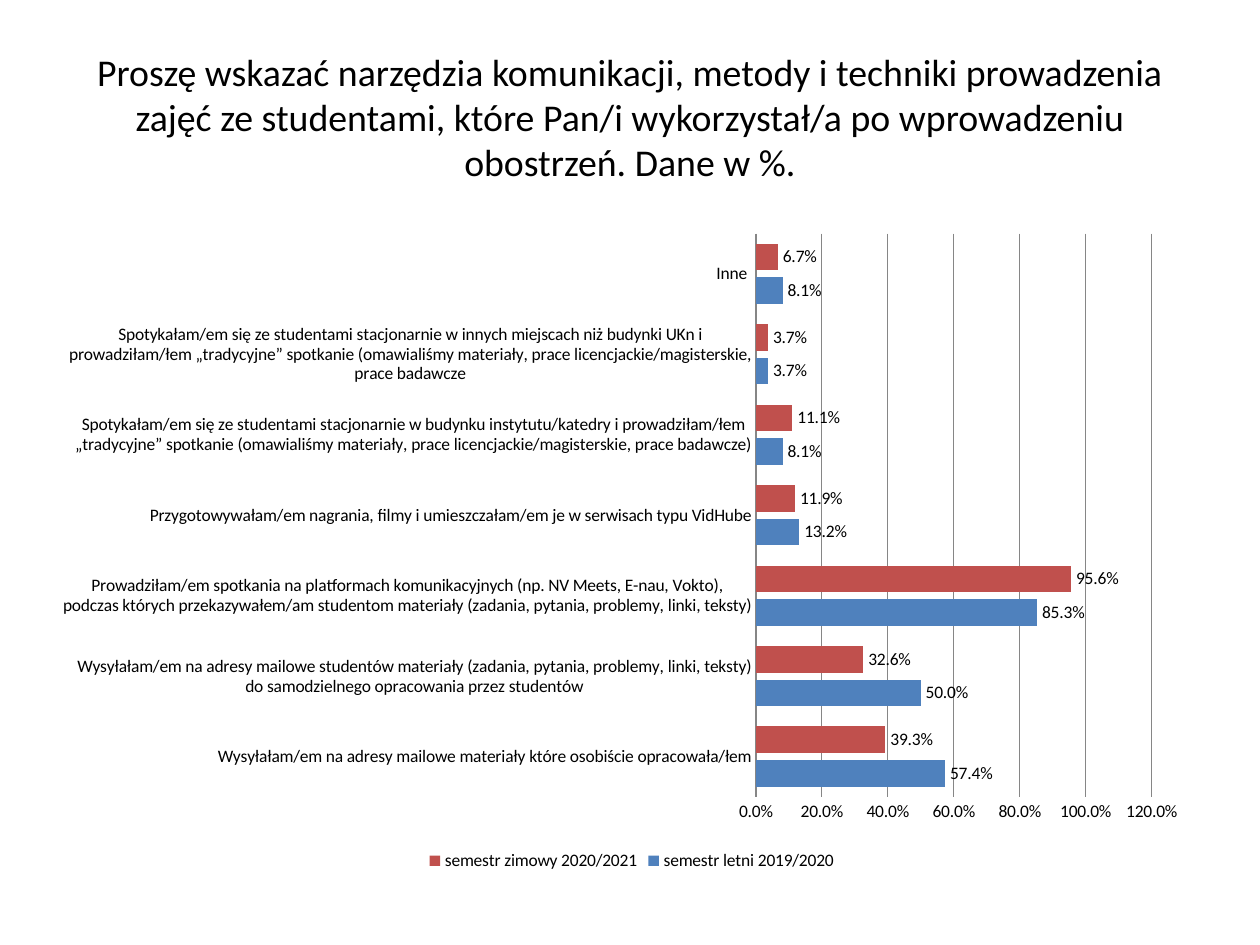
import dataclasses

import lxml.etree
import pptx
import pptx.chart.data
import pptx.dml.color
import pptx.enum.chart
import pptx.enum.text
import pptx.oxml.ns
import pptx.util

EMU_PER_PX = 9144
FONT = "Calibri"
NUMBER_FORMAT = "###0.0%"
COLORS = {
    "text": "000000",
    "grid": "868686",
    "summer": "4F81BD",
    "winter": "C0504D",
}
TITLE = (
    "Proszę wskazać narzędzia komunikacji, metody i techniki prowadzenia zajęć "
    "ze studentami, które Pan/i wykorzystał/a po wprowadzeniu obostrzeń. Dane w %."
)
CATEGORIES = (
    "Wysyłałam/em na adresy mailowe materiały które osobiście opracowała/łem",
    "Wysyłałam/em na adresy mailowe studentów materiały (zadania, pytania, "
    "problemy, linki, teksty) do samodzielnego opracowania przez studentów",
    "Prowadziłam/em spotkania na platformach komunikacyjnych (np. NV Meets, "
    "E-nau, Vokto), podczas których przekazywałem/am studentom materiały "
    "(zadania, pytania, problemy, linki, teksty)",
    "Przygotowywałam/em nagrania, filmy i umieszczałam/em je w serwisach typu VidHube",
    "Spotykałam/em się ze studentami stacjonarnie w budynku instytutu/katedry "
    "i prowadziłam/łem „tradycyjne” spotkanie (omawialiśmy materiały, prace "
    "licencjackie/magisterskie, prace badawcze)",
    "Spotykałam/em się ze studentami stacjonarnie w innych miejscach niż budynki "
    "UKn i prowadziłam/łem „tradycyjne” spotkanie (omawialiśmy materiały, prace "
    "licencjackie/magisterskie, prace badawcze",
    "Inne ",
)


@dataclasses.dataclass(frozen=True)
class Box:
    left: int
    top: int
    width: int
    height: int

    def emu(self) -> tuple[int, ...]:
        return tuple(px(value) for value in dataclasses.astuple(self))


@dataclasses.dataclass(frozen=True)
class Semester:
    name: str
    values: tuple[float, ...]
    color: str


TITLE_BOX = Box(50, 30, 900, 125)
CHART_BOX = Box(50, 175, 900, 520)
PLOT_LAYOUT = {"x": 0.61, "y": 0.02, "w": 0.35, "h": 0.86}
SEMESTERS = (
    Semester(
        "semestr letni 2019/2020",
        (0.574, 0.5, 0.853, 0.132, 0.081, 0.037, 0.081),
        "summer",
    ),
    Semester(
        "semestr zimowy 2020/2021",
        (0.393, 0.326, 0.956, 0.119, 0.111, 0.037, 0.067),
        "winter",
    ),
)


def px(value: int) -> int:
    return pptx.util.Emu(value * EMU_PER_PX)


def rgb(name: str) -> pptx.dml.color.RGBColor:
    return pptx.dml.color.RGBColor.from_string(COLORS[name])


def format_font(font, *, size: float, color: str = "text") -> None:
    font.name = FONT
    font.size = pptx.util.Pt(size)
    font.bold = False
    font.color.rgb = rgb(color)


def write_text(shape, text: str, *, size: float, color: str = "text") -> None:
    frame = shape.text_frame
    frame.text = text
    frame.word_wrap = True
    frame.auto_size = pptx.enum.text.MSO_AUTO_SIZE.NONE
    frame.vertical_anchor = pptx.enum.text.MSO_ANCHOR.MIDDLE
    paragraph = frame.paragraphs[0]
    paragraph.alignment = pptx.enum.text.PP_ALIGN.CENTER
    format_font(paragraph.runs[0].font, size=size, color=color)


def place_plot(chart) -> None:
    qn = pptx.oxml.ns.qn
    plot_area = chart.plots[0]._element.getparent()
    for layout in plot_area.findall(qn("c:layout")):
        plot_area.remove(layout)
    layout = lxml.etree.Element(qn("c:layout"))
    plot_area.insert(0, layout)
    manual = lxml.etree.SubElement(layout, qn("c:manualLayout"))
    settings = {"layoutTarget": "inner", "xMode": "edge", "yMode": "edge", **PLOT_LAYOUT}
    for tag, value in settings.items():
        lxml.etree.SubElement(manual, qn(f"c:{tag}")).set("val", str(value))


def format_axes(chart) -> None:
    for axis in (chart.category_axis, chart.value_axis):
        axis.major_tick_mark = pptx.enum.chart.XL_TICK_MARK.NONE
        axis.minor_tick_mark = pptx.enum.chart.XL_TICK_MARK.NONE
        format_font(axis.tick_labels.font, size=10)
    chart.category_axis.format.line.color.rgb = rgb("grid")
    value_axis = chart.value_axis
    value_axis.minimum_scale = 0
    value_axis.maximum_scale = 1.2
    value_axis.major_unit = 0.2
    value_axis.format.line.fill.background()
    value_axis.has_major_gridlines = True
    value_axis.major_gridlines.format.line.color.rgb = rgb("grid")
    value_axis.tick_labels.number_format = NUMBER_FORMAT
    value_axis.tick_labels.number_format_is_linked = False


def format_series(series, semester: Semester) -> None:
    series.format.fill.solid()
    series.format.fill.fore_color.rgb = rgb(semester.color)
    series.invert_if_negative = False
    labels = series.data_labels
    labels.show_value = True
    labels.number_format = NUMBER_FORMAT
    labels.number_format_is_linked = False
    labels.position = pptx.enum.chart.XL_LABEL_POSITION.OUTSIDE_END
    format_font(labels.font, size=10)


def add_bar_chart(slide, box: Box, semesters: tuple[Semester, ...]) -> None:
    data = pptx.chart.data.CategoryChartData(number_format=NUMBER_FORMAT)
    data.categories = CATEGORIES
    for semester in semesters:
        data.add_series(semester.name, semester.values)
    chart = slide.shapes.add_chart(
        pptx.enum.chart.XL_CHART_TYPE.BAR_CLUSTERED, *box.emu(), data
    ).chart
    format_font(chart.font, size=10)
    chart.has_title = False
    chart.has_legend = True
    chart.legend.position = pptx.enum.chart.XL_LEGEND_POSITION.BOTTOM
    chart.legend.include_in_layout = False
    format_font(chart.legend.font, size=10)
    plot = chart.plots[0]
    plot.vary_by_categories = False
    plot.gap_width = 75
    plot.overlap = -25
    for series, semester in zip(plot.series, semesters):
        format_series(series, semester)
    format_axes(chart)
    place_plot(chart)


def main() -> None:
    presentation = pptx.Presentation()
    presentation.slide_width = px(1000)
    presentation.slide_height = px(750)
    slide = presentation.slides.add_slide(presentation.slide_layouts[5])
    title = slide.shapes.title
    title.left, title.top, title.width, title.height = TITLE_BOX.emu()
    write_text(title, TITLE, size=21.6)
    add_bar_chart(slide, CHART_BOX, SEMESTERS)
    presentation.save("out.pptx")


if __name__ == "__main__":
    main()
